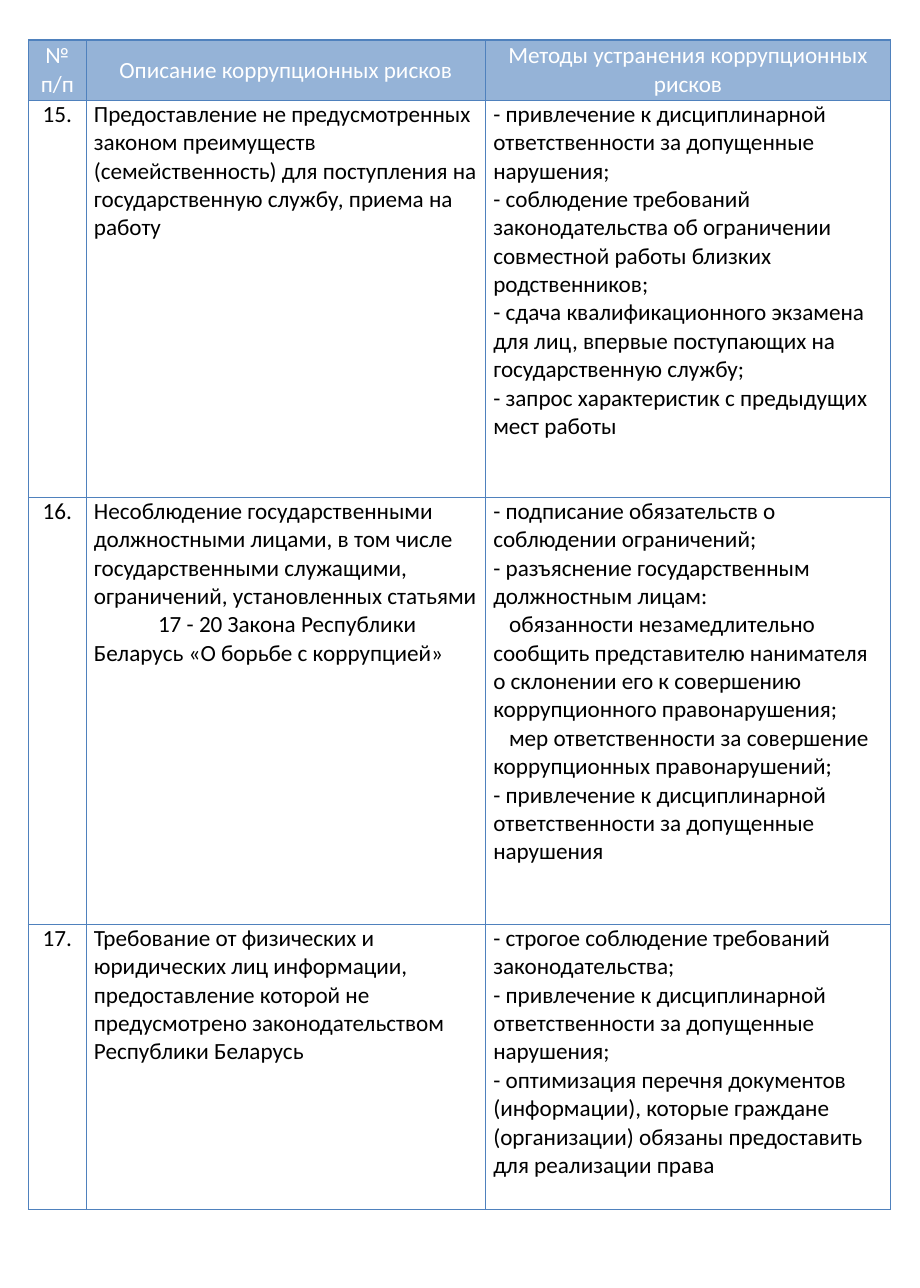
from lxml.etree import SubElement
from pptx import Presentation
from pptx.dml.color import RGBColor
from pptx.enum.text import MSO_ANCHOR as Anchor, PP_ALIGN as Align
from pptx.oxml.ns import qn
from pptx.util import Pt

BORDER = "4F81BD"
HEADER_FILL = "95B3D7"
COLUMN_WIDTHS = [37.4, 258.5, 262.1]
ROW_HEIGHTS = [38.9, 257, 276.5, 184.4]
HEADERS = ["№ п/п", "Описание коррупционных рисков", "Методы устранения коррупционных рисков"]
DISCIPLINE = "- привлечение к дисциплинарной ответственности за допущенные нарушения"
RISKS = [
    ("15.",
     ["Предоставление не предусмотренных законом преимуществ (семейственность) "
      "для поступления на государственную службу, приема на работу"],
     [DISCIPLINE + ";",
      "- соблюдение требований законодательства об ограничении совместной работы близких родственников;",
      "- сдача квалификационного экзамена для лиц, впервые поступающих на государственную службу;",
      "- запрос характеристик с предыдущих мест работы"]),
    ("16.",
     ["Несоблюдение государственными должностными лицами, в том числе "
      "государственными служащими, ограничений, установленных статьями",
      ("17 - 20 Закона Республики Беларусь «О борьбе с коррупцией»", 41.5)],
     ["- подписание обязательств о соблюдении ограничений;",
      "- разъяснение государственным должностным лицам:",
      ("обязанности незамедлительно сообщить представителю нанимателя "
       "о склонении его к совершению коррупционного правонарушения;", 10.2),
      ("мер ответственности за совершение коррупционных правонарушений;", 10.2),
      DISCIPLINE]),
    ("17.",
     ["Требование от физических и юридических лиц информации, предоставление "
      "которой не предусмотрено законодательством Республики Беларусь"],
     ["- строгое соблюдение требований законодательства;",
      DISCIPLINE + ";",
      "- оптимизация перечня документов (информации), которые граждане "
      "(организации) обязаны предоставить для реализации права"]),
]


def color(value):
    return RGBColor.from_string(value)


def write(para, text, size=15, ink="000000", align=Align.LEFT, indent=0):
    para.alignment = align
    if indent:
        properties = para._p.get_or_add_pPr()
        properties.set("marL", "0")
        properties.set("indent", str(int(Pt(indent))))
    span = para.add_run()
    span.text = text
    span.font.name = "Calibri"
    span.font.size = Pt(size)
    span.font.bold = False
    span.font.color.rgb = color(ink)


def draw_borders(cell):
    properties = cell._tc.get_or_add_tcPr()
    for position, side in enumerate(("lnL", "lnR", "lnT", "lnB")):
        line = SubElement(properties, qn(f"a:{side}"), w=str(int(Pt(1))))
        fill = SubElement(line, qn("a:solidFill"))
        SubElement(fill, qn("a:srgbClr"), val=BORDER)
        properties.insert(position, line)


def fill_cell(cell, items, margin=6.5, fill=None, anchor=Anchor.TOP, **text_format):
    cell.margin_left = cell.margin_right = Pt(margin)
    cell.margin_top = cell.margin_bottom = Pt(0)
    cell.vertical_anchor = anchor
    if fill:
        cell.fill.solid()
        cell.fill.fore_color.rgb = color(fill)
    else:
        cell.fill.background()
    draw_borders(cell)
    frame = cell.text_frame
    for number, item in enumerate(items):
        text, indent = item if isinstance(item, tuple) else (item, 0)
        para = frame.add_paragraph() if number else frame.paragraphs[0]
        write(para, text, indent=indent, **text_format)


def add_risk_table(page):
    frame = page.shapes.add_table(len(ROW_HEIGHTS), len(COLUMN_WIDTHS), Pt(18.4), Pt(26),
                                  Pt(sum(COLUMN_WIDTHS)), Pt(sum(ROW_HEIGHTS)))
    table = frame.table
    table.horz_banding = False
    for column, width in zip(table.columns, COLUMN_WIDTHS):
        column.width = Pt(width)
    for row, height in zip(table.rows, ROW_HEIGHTS):
        row.height = Pt(height)
    for index, header in enumerate(HEADERS):
        fill_cell(table.cell(0, index), [header], fill=HEADER_FILL,
                  anchor=Anchor.MIDDLE, ink="FFFFFF", align=Align.CENTER)
    for index, (number, description, methods) in enumerate(RISKS, start=1):
        fill_cell(table.cell(index, 0), [number], align=Align.CENTER)
        fill_cell(table.cell(index, 1), description, margin=5)
        fill_cell(table.cell(index, 2), methods, margin=5)


def main():
    deck = Presentation()
    deck.slide_width = Pt(595.44)
    deck.slide_height = Pt(833.76)
    page = deck.slides.add_slide(deck.slide_layouts[6])
    add_risk_table(page)
    deck.save("out.pptx")


if __name__ == "__main__":
    main()
